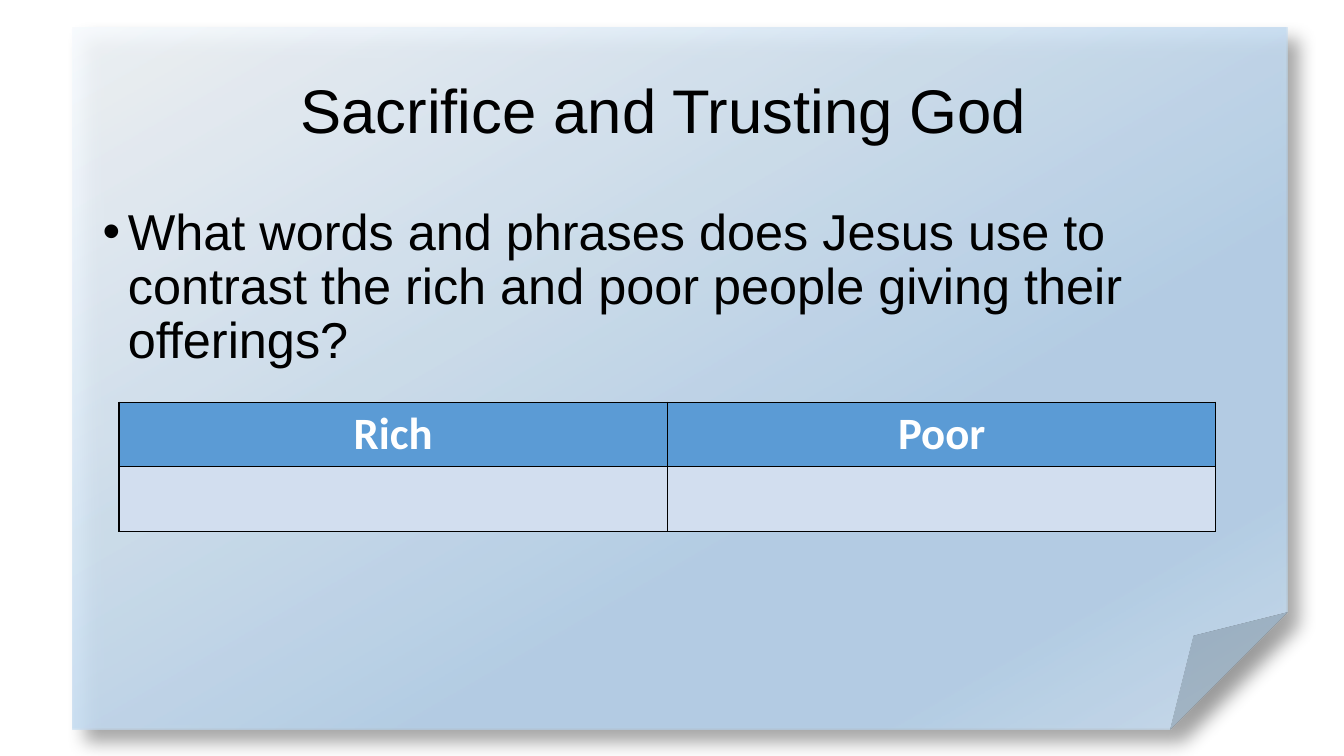
from dataclasses import dataclass

from lxml.etree import SubElement
from pptx import Presentation
from pptx.dml.color import RGBColor
from pptx.enum.shapes import MSO_SHAPE as Preset
from pptx.enum.text import MSO_ANCHOR as Anchor, MSO_AUTO_SIZE as AutoSize, PP_ALIGN as Align
from pptx.oxml import parse_xml
from pptx.oxml.ns import nsdecls, qn
from pptx.shapes.autoshape import Shape
from pptx.slide import Slide
from pptx.table import _Cell as Cell
from pptx.text.text import _Paragraph as Paragraph
from pptx.util import Inches, Pt

BLACK = RGBColor(0x00, 0x00, 0x00)
WHITE = RGBColor(0xFF, 0xFF, 0xFF)
HEADER_BLUE = RGBColor(0x5B, 0x9B, 0xD5)
BODY_BLUE = RGBColor(0xD2, 0xDE, 0xEF)
PAPER_LIGHT = RGBColor(0xF7, 0xFA, 0xFD)
PAPER_BLUE = RGBColor(0xB5, 0xD2, 0xEC)
PAPER_EDGE = RGBColor(0xCE, 0xE1, 0xF2)


@dataclass(frozen=True)
class Box:
    left: float
    top: float
    width: float
    height: float

    def lengths(self) -> tuple[Inches, Inches, Inches, Inches]:
        return Inches(self.left), Inches(self.top), Inches(self.width), Inches(self.height)


@dataclass(frozen=True)
class GradientStop:
    percent: int
    color: RGBColor


@dataclass(frozen=True)
class TableRow:
    texts: tuple[str, str]
    fill: RGBColor
    color: RGBColor
    bold: bool


PAPER_BOX = Box(0.72, 0.27, 12.05, 6.97)
TITLE_BOX = Box(0.92, 0.4, 11.5, 1.45)
QUESTION_BOX = Box(0.92, 2, 11.5, 4.76)
TABLE_BOX = Box(1.18, 3.99, 10.88, 1.28)
PAPER_STOPS = [
    GradientStop(0, PAPER_LIGHT),
    GradientStop(64, PAPER_BLUE),
    GradientStop(83, PAPER_BLUE),
    GradientStop(100, PAPER_EDGE),
]
TABLE_ROWS = [
    TableRow(("Rich", "Poor"), HEADER_BLUE, WHITE, True),
    TableRow(("", ""), BODY_BLUE, BLACK, False),
]


def format_paragraph(paragraph: Paragraph, size: int, name: str, color: RGBColor, bold: bool = False) -> None:
    paragraph.font.size = Pt(size)
    for run in paragraph.runs:
        run.font.size = Pt(size)
        run.font.name = name
        run.font.color.rgb = color
        run.font.bold = bold


def place(shape: Shape, box: Box) -> None:
    shape.left, shape.top, shape.width, shape.height = box.lengths()


def add_paper(slide: Slide) -> None:
    paper = slide.shapes.add_shape(Preset.FOLDED_CORNER, *PAPER_BOX.lengths())
    paper.line.fill.background()
    stops = "".join(
        f'<a:gs pos="{stop.percent * 1000}"><a:srgbClr val="{stop.color}">'
        f'<a:alpha val="87000"/></a:srgbClr></a:gs>'
        for stop in PAPER_STOPS
    )
    gradient = parse_xml(
        f'<a:gradFill {nsdecls("a")} rotWithShape="1"><a:gsLst>{stops}</a:gsLst>'
        f'<a:lin ang="{60 * 60000}" scaled="0"/></a:gradFill>'
    )
    shadow = parse_xml(
        f'<a:effectLst {nsdecls("a")}><a:outerShdw blurRad="{Pt(13)}" dist="{Pt(13)}" '
        f'dir="{45 * 60000}" algn="tl" rotWithShape="0"><a:srgbClr val="{BLACK}">'
        f'<a:alpha val="40000"/></a:srgbClr></a:outerShdw></a:effectLst>'
    )
    properties = paper._element.spPr
    properties.find(qn("a:prstGeom")).addnext(gradient)
    properties.append(shadow)
    slide.shapes._spTree.insert(2, paper._element)


def add_title(slide: Slide) -> None:
    title = slide.shapes.title
    place(title, TITLE_BOX)
    frame = title.text_frame
    frame.text = "Sacrifice and Trusting God "
    frame.auto_size = AutoSize.NONE
    frame.vertical_anchor = Anchor.MIDDLE
    paragraph = frame.paragraphs[0]
    paragraph.alignment = Align.CENTER
    paragraph.line_spacing = 0.9
    format_paragraph(paragraph, 44, "Arial", BLACK)


def add_question(slide: Slide) -> None:
    frame = slide.shapes.add_textbox(*QUESTION_BOX.lengths()).text_frame
    frame.word_wrap = True
    frame.text = (
        "What words and phrases does Jesus use to contrast the rich "
        "and poor people giving their offerings?"
    )
    paragraph = frame.paragraphs[0]
    paragraph.line_spacing = 0.9
    properties = paragraph._p.get_or_add_pPr()
    properties.set("marL", str(Inches(0.25)))
    properties.set("indent", str(Inches(-0.25)))
    SubElement(properties, qn("a:buFont"), typeface="Arial")
    SubElement(properties, qn("a:buChar"), char="•")
    format_paragraph(paragraph, 36, "Arial", BLACK)


def add_borders(cell: Cell) -> None:
    properties = cell._tc.get_or_add_tcPr()
    for index, side in enumerate(("lnL", "lnR", "lnT", "lnB")):
        border = parse_xml(
            f'<a:{side} {nsdecls("a")} w="{Pt(1)}"><a:solidFill>'
            f'<a:srgbClr val="{BLACK}"/></a:solidFill></a:{side}>'
        )
        properties.insert(index, border)


def add_comparison(slide: Slide) -> None:
    table = slide.shapes.add_table(len(TABLE_ROWS), 2, *TABLE_BOX.lengths()).table
    for row_index, row in enumerate(TABLE_ROWS):
        for column_index, text in enumerate(row.texts):
            cell = table.cell(row_index, column_index)
            cell.text = text
            cell.fill.solid()
            cell.fill.fore_color.rgb = row.fill
            paragraph = cell.text_frame.paragraphs[0]
            paragraph.alignment = Align.CENTER
            format_paragraph(paragraph, 32, "Calibri", row.color, row.bold)
            add_borders(cell)


def main() -> None:
    presentation = Presentation()
    presentation.slide_width = Inches(13.33)
    presentation.slide_height = Inches(7.5)
    slide = presentation.slides.add_slide(presentation.slide_layouts[5])
    add_paper(slide)
    add_title(slide)
    add_question(slide)
    add_comparison(slide)
    presentation.save("out.pptx")


if __name__ == "__main__":
    main()
